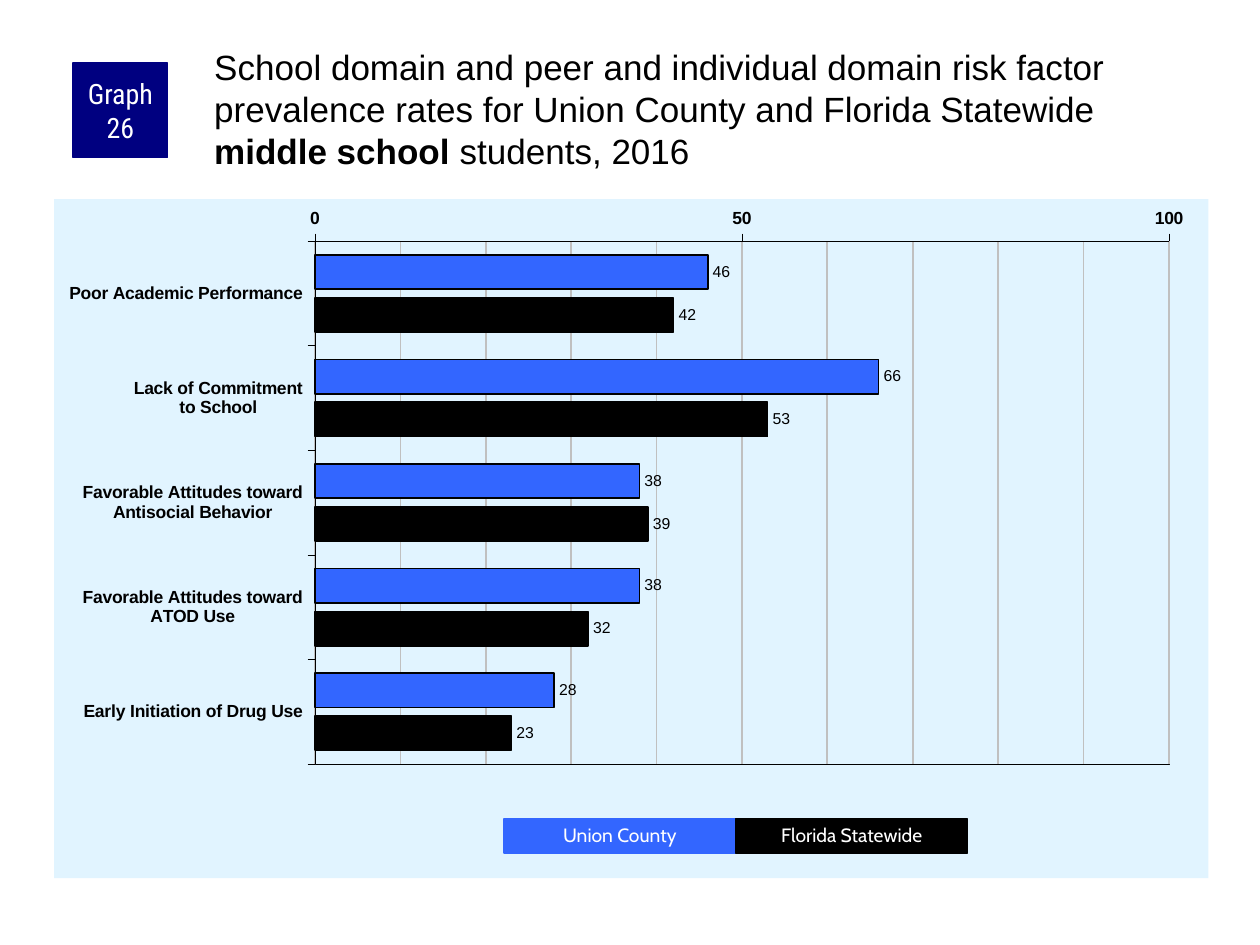
from copy import deepcopy
from dataclasses import dataclass

from pptx import Presentation
from pptx.chart.data import CategoryChartData
from pptx.dml.color import RGBColor
from pptx.enum.chart import (XL_AXIS_CROSSES, XL_CHART_TYPE, XL_LABEL_POSITION,
                             XL_TICK_MARK)
from pptx.enum.shapes import MSO_SHAPE
from pptx.enum.text import MSO_ANCHOR, PP_ALIGN
from pptx.oxml import parse_xml
from pptx.oxml.ns import nsdecls, qn
from pptx.util import Inches, Pt

BAR_CLUSTERED = XL_CHART_TYPE.BAR_CLUSTERED
OUTSIDE_END = XL_LABEL_POSITION.OUTSIDE_END
TICK_OUTSIDE = XL_TICK_MARK.OUTSIDE
TICK_NONE = XL_TICK_MARK.NONE
CROSSES_MAXIMUM = XL_AXIS_CROSSES.MAXIMUM
RECTANGLE = MSO_SHAPE.RECTANGLE
MIDDLE = MSO_ANCHOR.MIDDLE
CENTER = PP_ALIGN.CENTER

BLACK = RGBColor(0x00, 0x00, 0x00)
WHITE = RGBColor(0xFF, 0xFF, 0xFF)
NAVY = RGBColor(0x00, 0x00, 0x80)
BLUE = RGBColor(0x33, 0x66, 0xFF)
PALE_BLUE = RGBColor(0xE1, 0xF4, 0xFF)
GRID_GRAY = RGBColor(0xC0, 0xC0, 0xC0)


@dataclass
class RiskSeries:
    name: str
    values: tuple
    color: RGBColor


@dataclass
class Panel:
    text: str
    left: float
    top: float
    width: float
    height: float
    color: RGBColor
    font: str
    size: float
    side_margin: float
    line_spacing: float


CATEGORIES = (
    "Poor Academic Performance",
    "Lack of Commitment\nto School",
    "Favorable Attitudes toward\nAntisocial Behavior",
    "Favorable Attitudes toward\nATOD Use",
    "Early Initiation of Drug Use",
)
SERIES = (
    RiskSeries("Union County", (46, 66, 38, 38, 28), BLUE),
    RiskSeries("Florida Statewide", (42, 53, 39, 32, 23), BLACK),
)
TITLE_RUNS = (
    ("School domain and peer and individual domain risk factor prevalence "
     "rates for Union County and Florida Statewide ", False),
    ("middle school", True),
    (" students, 2016", False),
)
LEGEND_LEFT, LEGEND_WIDTH = 4, 1.84
PANELS = [Panel("Graph 26", 0.58, 0.5, 0.75, 0.75, NAVY, "Roboto Condensed", 16, 0.05, 1)]
PANELS += [
    Panel(series.name, LEGEND_LEFT + index * LEGEND_WIDTH, 6.5, LEGEND_WIDTH, 0.27,
          series.color, "Cabin", 11, 0.1, 0.9)
    for index, series in enumerate(SERIES)
]


def set_font(font, size: float, color: RGBColor, name: str = "Arial", bold: bool = False) -> None:
    formats = {"name": name, "size": Pt(size), "bold": bold}
    for attribute, value in formats.items():
        setattr(font, attribute, value)
    font.color.rgb = color


def set_line(line, color: RGBColor, width: float) -> None:
    line.color.rgb = color
    line.width = Pt(width)


def style_axis(axis, formats: dict) -> None:
    for attribute, value in formats.items():
        setattr(axis, attribute, value)
    set_line(axis.format.line, BLACK, 0.25)
    set_font(axis.tick_labels.font, 10, BLACK, bold=True)


def style_gridlines(chart) -> None:
    """Give the minor gridlines the same line as the major ones."""
    set_line(chart.value_axis.major_gridlines.format.line, GRID_GRAY, 1)
    space = chart._chartSpace
    major, minor = (space.find(".//" + qn(f"c:{kind}Gridlines")) for kind in ("major", "minor"))
    minor.append(deepcopy(major.find(qn("c:spPr"))))


def style_chart_areas(chart) -> None:
    """Fill the chart area, place the plot area and outline it."""
    space = chart._chartSpace
    space.find(qn("c:chart")).addnext(parse_xml(
        f'<c:spPr {nsdecls("c", "a")}><a:solidFill><a:srgbClr val="{PALE_BLUE}"/>'
        '</a:solidFill><a:ln><a:noFill/></a:ln></c:spPr>'))

    plot_area = space.find(".//" + qn("c:plotArea"))
    for layout in plot_area.findall(qn("c:layout")):
        plot_area.remove(layout)
    position = {"x": 0.226, "y": 0.062, "w": 0.74, "h": 0.77}
    modes = "".join(f'<c:{key}Mode val="edge"/>' for key in "xy")
    sizes = "".join(f'<c:{key} val="{value}"/>' for key, value in position.items())
    plot_area.insert(0, parse_xml(
        f'<c:layout {nsdecls("c")}><c:manualLayout><c:layoutTarget val="inner"/>'
        f'{modes}{sizes}</c:manualLayout></c:layout>'))
    plot_area.append(parse_xml(
        f'<c:spPr {nsdecls("c", "a")}><a:noFill/><a:ln w="{Pt(0.25)}"><a:solidFill>'
        f'<a:srgbClr val="{BLACK}"/></a:solidFill></a:ln></c:spPr>'))


def add_risk_chart(slide) -> None:
    data = CategoryChartData(number_format="0")
    data.categories = CATEGORIES
    for series in SERIES:
        data.add_series(series.name, series.values)
    chart = slide.shapes.add_chart(BAR_CLUSTERED, Inches(0.43), Inches(1.58),
                                   Inches(9.16), Inches(5.39), data).chart
    chart.has_legend = False
    chart.has_title = False
    set_font(chart.font, 11.8, BLACK)

    # Bars and their value labels
    plot = chart.plots[0]
    for attribute, value in {"gap_width": 80, "overlap": -25, "vary_by_categories": False}.items():
        setattr(plot, attribute, value)
    for bars, series in zip(plot.series, SERIES):
        bars.format.fill.solid()
        bars.format.fill.fore_color.rgb = series.color
        set_line(bars.format.line, BLACK, 1)
        bars.data_labels.show_value = True
        bars.data_labels.position = OUTSIDE_END
        set_font(bars.data_labels.font, 9, BLACK)

    # Axes and gridlines
    style_axis(chart.category_axis, {
        "reverse_order": True, "crosses": CROSSES_MAXIMUM,
        "major_tick_mark": TICK_OUTSIDE, "minor_tick_mark": TICK_NONE})
    style_axis(chart.value_axis, {
        "minimum_scale": 0, "maximum_scale": 100, "major_unit": 50, "minor_unit": 10,
        "has_major_gridlines": True, "has_minor_gridlines": True,
        "major_tick_mark": TICK_OUTSIDE, "minor_tick_mark": TICK_NONE})
    style_gridlines(chart)
    style_chart_areas(chart)


def add_panel(slide, panel: Panel) -> None:
    shape = slide.shapes.add_shape(RECTANGLE, Inches(panel.left), Inches(panel.top),
                                   Inches(panel.width), Inches(panel.height))
    shape.shadow.inherit = False
    shape.fill.solid()
    shape.fill.fore_color.rgb = panel.color
    set_line(shape.line, panel.color, 0.75)
    formats = {"word_wrap": True, "vertical_anchor": MIDDLE,
               "margin_left": Inches(panel.side_margin),
               "margin_right": Inches(panel.side_margin),
               "margin_top": 0, "margin_bottom": 0}
    for attribute, value in formats.items():
        setattr(shape.text_frame, attribute, value)
    paragraph = shape.text_frame.paragraphs[0]
    paragraph.alignment = CENTER
    paragraph.line_spacing = panel.line_spacing
    run = paragraph.add_run()
    run.text = panel.text
    set_font(run.font, panel.size, WHITE, panel.font)


def add_title(slide) -> None:
    frame = slide.shapes.add_textbox(Inches(1.67), Inches(0.33),
                                     Inches(7.92), Inches(0.83)).text_frame
    formats = {"word_wrap": True, "margin_left": Inches(0.03), "margin_top": Inches(0.03),
               "margin_right": 0, "margin_bottom": 0}
    for attribute, value in formats.items():
        setattr(frame, attribute, value)
    for text, bold in TITLE_RUNS:
        run = frame.paragraphs[0].add_run()
        run.text = text
        set_font(run.font, 20, BLACK, bold=bold)


def main() -> None:
    presentation = Presentation()
    presentation.slide_width = Inches(10)
    presentation.slide_height = Inches(7.5)
    slide = presentation.slides.add_slide(presentation.slide_layouts[6])
    add_risk_chart(slide)
    add_title(slide)
    for panel in PANELS:
        add_panel(slide, panel)
    presentation.save("out.pptx")


if __name__ == "__main__":
    main()
